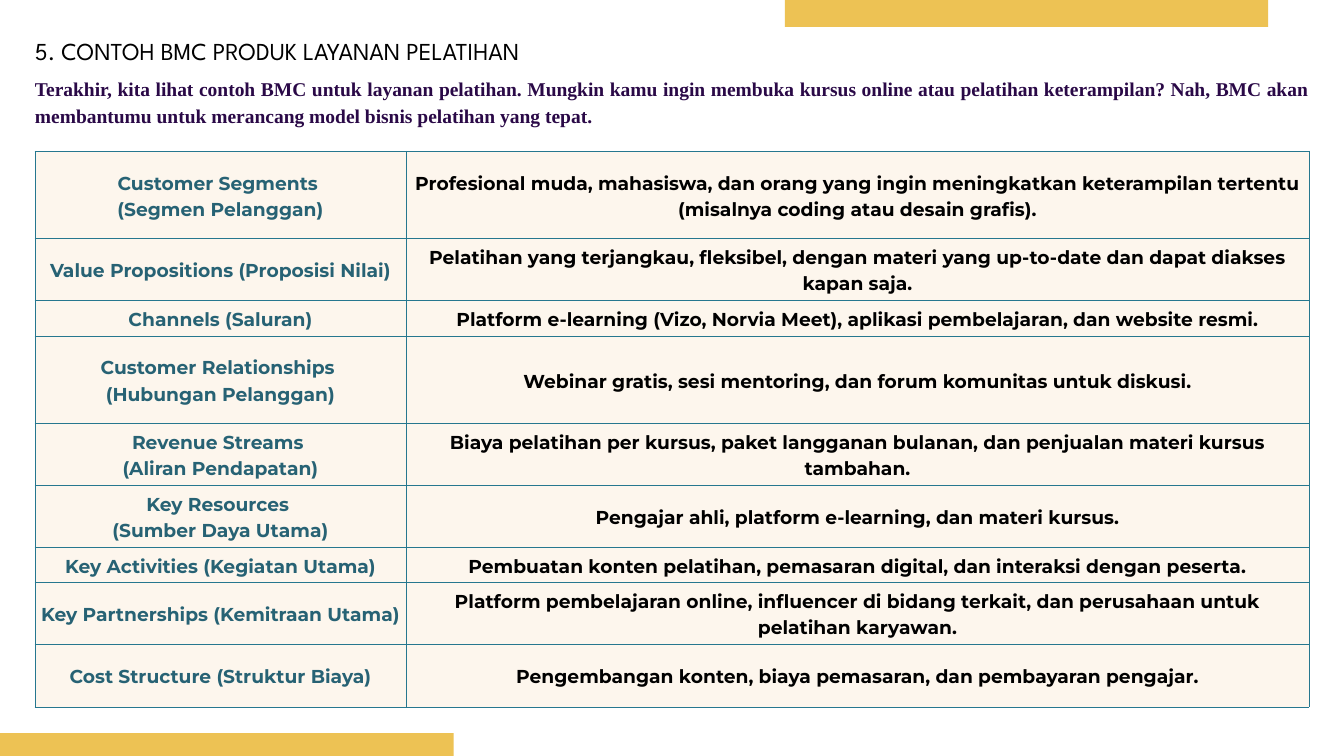
from lxml.etree import SubElement
from pptx import Presentation
from pptx.dml.color import RGBColor
from pptx.enum.shapes import MSO_SHAPE as Shape
from pptx.enum.text import MSO_ANCHOR as Anchor, MSO_AUTO_SIZE as AutoSize, PP_ALIGN as Align
from pptx.oxml.ns import qn
from pptx.util import Pt

EMU_PER_PX = 9144
GOLD = RGBColor(0xED, 0xC2, 0x54)
CREAM = RGBColor(0xFD, 0xF6, 0xED)
TEAL = RGBColor(0x27, 0x62, 0x74)
BORDER = RGBColor(0x26, 0x77, 0x8F)
PURPLE = RGBColor(0x2A, 0x09, 0x47)
BLACK = RGBColor(0, 0, 0)

TITLE = "5. CONTOH BMC PRODUK LAYANAN PELATIHAN"
INTRO = (
    "Terakhir, kita lihat contoh BMC untuk layanan pelatihan. Mungkin kamu ingin membuka "
    "kursus online atau pelatihan keterampilan? Nah, BMC akan membantumu untuk merancang "
    "model bisnis pelatihan yang tepat."
)
COLUMN_WIDTHS = (552, 1344)
CANVAS_BLOCKS = [
    (130, "Customer Segments \n(Segmen Pelanggan)",
     "Profesional muda, mahasiswa, dan orang yang ingin meningkatkan keterampilan tertentu "
     "(misalnya coding atau desain grafis)."),
    (92, "Value Propositions (Proposisi Nilai)",
     "Pelatihan yang terjangkau, fleksibel, dengan materi yang up-to-date dan dapat diakses "
     "kapan saja."),
    (53, "Channels (Saluran)",
     "Platform e-learning (Vizo, Norvia Meet), aplikasi pembelajaran, dan website resmi."),
    (130, "Customer Relationships \n(Hubungan Pelanggan)",
     "Webinar gratis, sesi mentoring, dan forum komunitas untuk diskusi."),
    (92, "Revenue Streams \n(Aliran Pendapatan)",
     "Biaya pelatihan per kursus, paket langganan bulanan, dan penjualan materi kursus "
     "tambahan."),
    (92, "Key Resources \n(Sumber Daya Utama)",
     "Pengajar ahli, platform e-learning, dan materi kursus."),
    (53, "Key Activities (Kegiatan Utama)",
     "Pembuatan konten pelatihan, pemasaran digital, dan interaksi dengan peserta."),
    (92, "Key Partnerships (Kemitraan Utama)",
     "Platform pembelajaran online, influencer di bidang terkait, dan perusahaan untuk "
     "pelatihan karyawan."),
    (93, "Cost Structure (Struktur Biaya)",
     "Pengembangan konten, biaya pemasaran, dan pembayaran pengajar."),
]


def px(length):
    """Turn whole pixels into EMU."""
    return length * EMU_PER_PX


def format_paragraph(paragraph, font_name, size, color, bold, align, spacing):
    """Set the font, alignment and line spacing of a paragraph."""
    paragraph.alignment = align
    paragraph.line_spacing = Pt(spacing)
    font = paragraph.font
    font.name, font.size, font.bold = font_name, Pt(size), bold
    font.color.rgb = color


def prepare_frame(frame):
    """Make a text frame wrap from the top with no margins."""
    frame.word_wrap = True
    frame.auto_size = AutoSize.NONE
    frame.vertical_anchor = Anchor.TOP
    frame.margin_left = frame.margin_top = frame.margin_right = frame.margin_bottom = 0


def add_band(slide, left, top, width, height):
    """Draw a gold band that bleeds over the slide edge."""
    band = slide.shapes.add_shape(Shape.RECTANGLE, px(left), px(top), px(width), px(height))
    band.shadow.inherit = False
    band.fill.solid()
    band.fill.fore_color.rgb = GOLD
    band.line.fill.background()


def place_title(slide, left, top, width, height):
    """Place and format the slide title."""
    title = slide.shapes.title
    title.left, title.top, title.width, title.height = map(px, (left, top, width, height))
    prepare_frame(title.text_frame)
    title.text_frame.text = TITLE
    format_paragraph(title.text_frame.paragraphs[0], "League Spartan", 26.1, BLACK, False,
                     Align.LEFT, 36.6)


def add_intro(slide, left, top, width, height):
    """Add the justified introduction."""
    intro = slide.shapes.add_textbox(px(left), px(top), px(width), px(height)).text_frame
    prepare_frame(intro)
    intro.text = INTRO
    format_paragraph(intro.paragraphs[0], "Times New Roman", 20.9, PURPLE, True,
                     Align.JUSTIFY, 29.3)


def add_borders(cell):
    """Draw a thin line on every side of a cell."""
    properties = cell._tc.get_or_add_tcPr()
    for side in ("lnL", "lnR", "lnT", "lnB"):
        line = SubElement(properties, qn(f"a:{side}"), w=str(Pt(0.75)))
        SubElement(SubElement(line, qn("a:solidFill")), qn("a:srgbClr"), val=str(BORDER))


def fill_cell(cell, text, color):
    """Write and style one cell of the canvas."""
    add_borders(cell)
    cell.fill.solid()
    cell.fill.fore_color.rgb = CREAM
    cell.vertical_anchor = Anchor.MIDDLE
    cell.margin_left = cell.margin_top = cell.margin_right = cell.margin_bottom = px(4)
    cell.text = text
    for paragraph in cell.text_frame.paragraphs:
        format_paragraph(paragraph, "Montserrat", 20, color, True, Align.CENTER, 28)


def add_canvas(slide, left, top):
    """Add the table of business model canvas blocks."""
    width = sum(COLUMN_WIDTHS)
    height = sum(block[0] for block in CANVAS_BLOCKS)
    canvas = slide.shapes.add_table(len(CANVAS_BLOCKS), len(COLUMN_WIDTHS),
                                    px(left), px(top), px(width), px(height)).table
    canvas.first_row = canvas.horz_banding = False
    for column, column_width in zip(canvas.columns, COLUMN_WIDTHS):
        column.width = px(column_width)
    for row, (row_height, block_name, description) in zip(canvas.rows, CANVAS_BLOCKS):
        row.height = px(row_height)
        fill_cell(row.cells[0], block_name, TEAL)
        fill_cell(row.cells[1], description, BLACK)


def main():
    """Build and save the presentation."""
    deck = Presentation()
    deck.slide_width, deck.slide_height = px(2000), px(1125)
    slide = deck.slides.add_slide(deck.slide_layouts[5])
    add_band(slide, -44, 1091, 719, 70)
    add_band(slide, 1168, -30, 719, 70)
    add_canvas(slide, 52, 225)
    place_title(slide, 52, 47, 948, 48)
    add_intro(slide, 52, 108, 1896, 120)
    deck.save("out.pptx")


if __name__ == "__main__":
    main()
